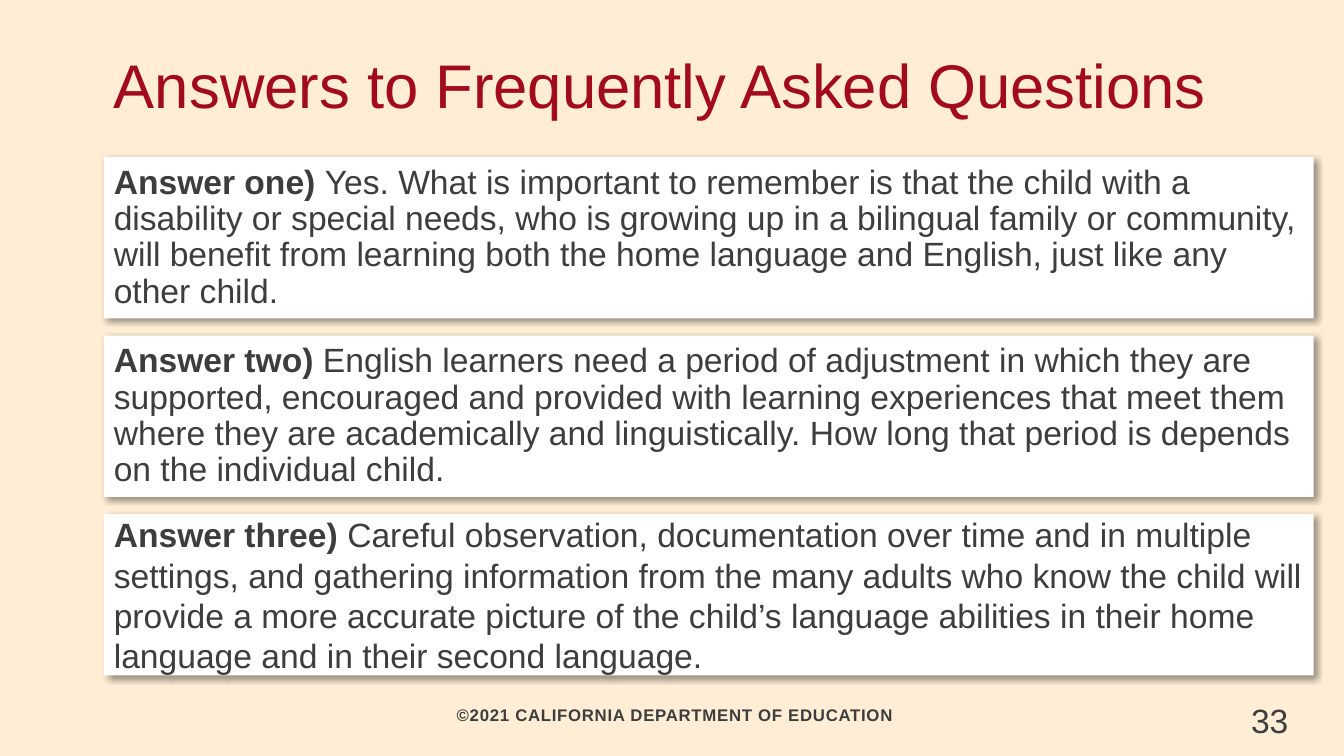
"""Build the slide of answers to frequently asked questions."""
from dataclasses import dataclass

import lxml.etree
import pptx
import pptx.dml.color
import pptx.enum.shapes
import pptx.enum.text
import pptx.oxml
import pptx.oxml.ns
import pptx.util

ALIGN = pptx.enum.text.PP_ALIGN
ANCHOR = pptx.enum.text.MSO_ANCHOR

ANSWERS = [
    ("Answer one) ",
     "Yes. What is important to remember is that the child with a disability or special needs, "
     "who is growing up in a bilingual family or community, will benefit from learning both "
     "the home language and English, just like any other child.", 0.9, 2),
    ("Answer two) ",
     "English learners need a period of adjustment in which they are supported, encouraged and "
     "provided with learning experiences that meet them where they are academically and "
     "linguistically. How long that period is depends on the individual child.", 0.9, 2),
    ("Answer three) ",
     "Careful observation, documentation over time and in multiple settings, and gathering "
     "information from the many adults who know the child will provide a more accurate picture "
     "of the child’s language abilities in their home language and in their second language.",
     1.0, 0),
]


@dataclass(frozen=True)
class Theme:
    """Colours, font and type sizes of the slide."""
    background: str = "FFEED5"
    card: str = "FFFFFF"
    accent: str = "A20B1D"
    ink: str = "3D3D3D"
    shadow: str = "000000"
    font: str = "Arial"
    title_size: int = 44
    body_size: int = 24
    footer_size: int = 12


def rgb(value):
    """Return a colour object for a hexadecimal string."""
    return pptx.dml.color.RGBColor.from_string(value)


class SlideBuilder:
    """Places styled elements on a grid of 100 columns by 100 rows."""

    def __init__(self, presentation, theme):
        """Add a title-only slide with the theme's background."""
        self.theme = theme
        self.column = presentation.slide_width / 100
        self.row = presentation.slide_height / 100
        self.slide = presentation.slides.add_slide(presentation.slide_layouts[5])
        fill = self.slide.background.fill
        fill.solid()
        fill.fore_color.rgb = rgb(theme.background)

    def area(self, left, top, width, height):
        """Convert columns and rows to lengths."""
        return [round(left * self.column), round(top * self.row),
                round(width * self.column), round(height * self.row)]

    def style(self, shape, size, color, anchor, align=ALIGN.LEFT, spacing=1.0):
        """Format a shape's frame and return its only paragraph."""
        frame = shape.text_frame
        frame.word_wrap = True
        frame.auto_size = pptx.enum.text.MSO_AUTO_SIZE.NONE
        frame.vertical_anchor = anchor
        paragraph = frame.paragraphs[0]
        paragraph.alignment = align
        paragraph.line_spacing = spacing
        paragraph.font.name = self.theme.font
        paragraph.font.size = pptx.util.Pt(size)
        paragraph.font.color.rgb = rgb(color)
        return paragraph

    def title(self, text, *cells):
        """Fill and move the title placeholder."""
        shape = self.slide.shapes.title
        shape.left, shape.top, shape.width, shape.height = self.area(*cells)
        shape.text_frame.text = text
        self.style(shape, self.theme.title_size, self.theme.accent, ANCHOR.BOTTOM, spacing=0.85)

    def card(self, label, text, spacing, space_after, *cells):
        """Add a shadowed answer card with a bold label."""
        shape = self.slide.shapes.add_shape(
            pptx.enum.shapes.MSO_SHAPE.RECTANGLE, *self.area(*cells))
        shape.fill.solid()
        shape.fill.fore_color.rgb = rgb(self.theme.card)
        shape.line.fill.background()
        self.drop_shadow(shape)
        paragraph = self.style(shape, self.theme.body_size, self.theme.ink,
                               ANCHOR.MIDDLE, spacing=spacing)
        paragraph.space_after = pptx.util.Pt(space_after)
        for words, bold in ((label, True), (text, False)):
            run = paragraph.add_run()
            run.text = words
            run.font.bold = bold

    def drop_shadow(self, shape):
        """Give a shape a soft shadow to the lower right."""
        shape.shadow.inherit = False
        effects = shape._element.spPr.find(pptx.oxml.ns.qn("a:effectLst"))
        effects.append(pptx.oxml.parse_xml(
            f'<a:outerShdw {pptx.oxml.ns.nsdecls("a")} blurRad="{pptx.util.Pt(4)}" '
            f'dist="{pptx.util.Pt(3)}" dir="2700000" algn="tl" rotWithShape="0">'
            f'<a:srgbClr val="{self.theme.shadow}"><a:alpha val="40000"/></a:srgbClr>'
            '</a:outerShdw>'))

    def text(self, text, size, anchor, *cells, **options):
        """Add a text box and return its paragraph."""
        shape = self.slide.shapes.add_textbox(*self.area(*cells))
        shape.text_frame.text = text
        return self.style(shape, size, self.theme.ink, anchor, **options)

    def footer(self, text, *cells):
        """Add the bold, letterspaced, indented copyright line."""
        paragraph = self.text(text, self.theme.footer_size, ANCHOR.MIDDLE, *cells,
                              align=ALIGN.CENTER, spacing=0.95)
        paragraph.font.bold = True
        properties = paragraph._p.get_or_add_pPr()
        properties.set("marL", str(pptx.util.Inches(0.5)))
        properties.set("indent", str(pptx.util.Inches(-0.45)))
        paragraph.runs[0].font._element.set("spc", "50")


def main():
    """Build and save the presentation."""
    presentation = pptx.Presentation()
    presentation.slide_width = pptx.util.Inches(13.33)
    presentation.slide_height = pptx.util.Inches(7.5)
    theme = Theme()
    builder = SlideBuilder(presentation, theme)
    left, width = 7.73, 90.02
    first_card, card_height, card_step = 20.8, 21.33, 23.6

    builder.footer("©2021 CALIFORNIA DEPARTMENT OF EDUCATION", left, 92.8, 84.62, 3.87)
    builder.title("Answers to Frequently Asked Questions", left, 0, width, 16.67)
    for index, answer in enumerate(ANSWERS):
        builder.card(*answer, left, first_card + index * card_step, width, card_height)
    builder.text("33", theme.body_size, ANCHOR.TOP, 92.35, 91.87, 7.65, 6.27)
    presentation.save("out.pptx")


if __name__ == "__main__":
    main()
